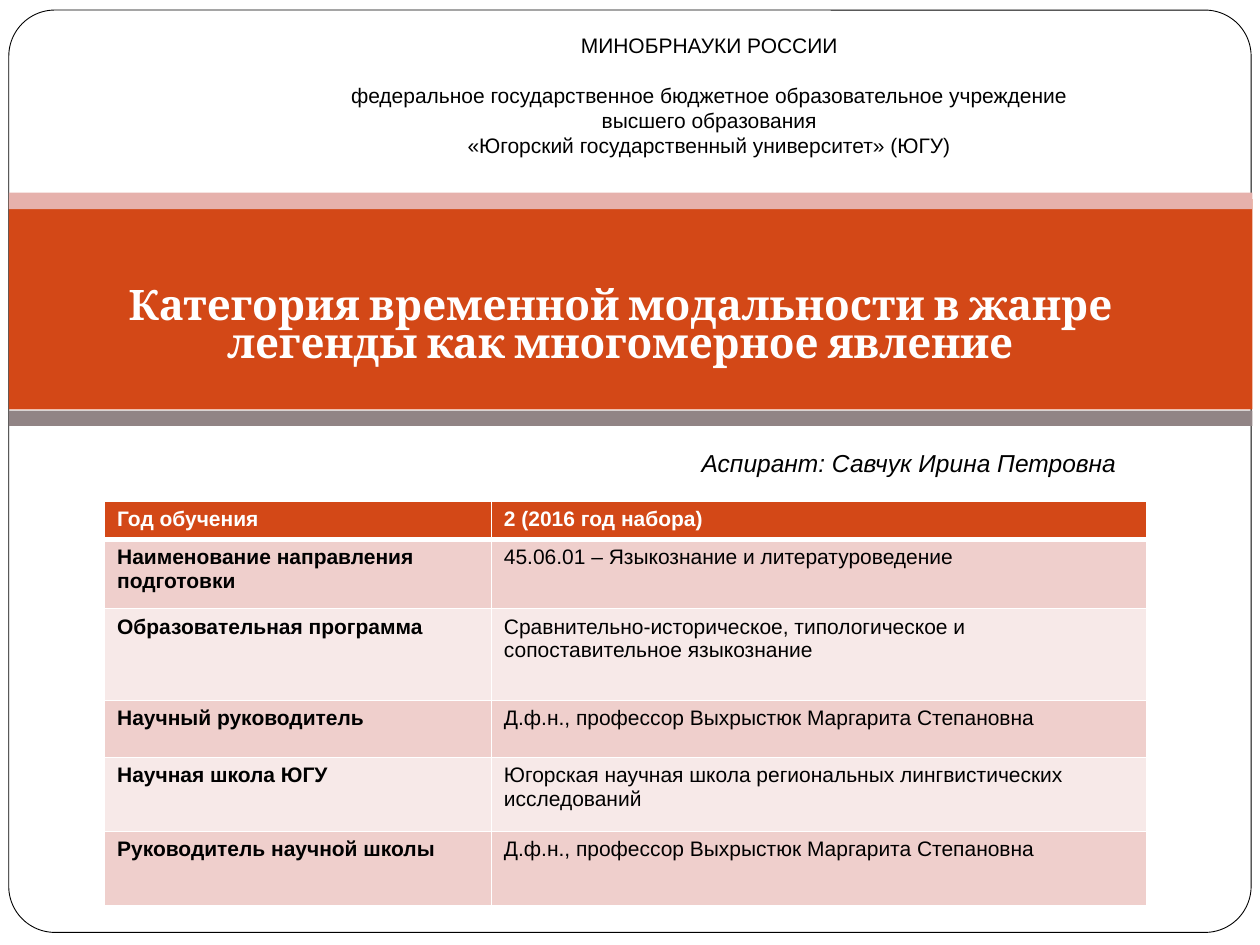
from lxml import etree
from pptx import Presentation
from pptx import util as u
from pptx.dml.color import RGBColor
from pptx.enum import shapes, text
from pptx.oxml import ns

COLORS = {
    "white": "FFFFFF",
    "black": "000000",
    "orange": "D34817",
    "pink": "E6B1AC",
    "gray": "918485",
    "dark_row": "EFCFCC",
    "light_row": "F7E9E8",
}

HEADER = [
    "МИНОБРНАУКИ РОССИИ",
    "федеральное государственное бюджетное образовательное учреждение",
    "высшего образования",
    "«Югорский государственный университет» (ЮГУ)",
]
TITLE = "Категория временной модальности в жанре легенды как многомерное явление"
AUTHOR = "Аспирант: Савчук Ирина Петровна"
DETAILS = [
    ("Год обучения", "2 (2016 год набора)"),
    ("Наименование направления подготовки", "45.06.01 – Языкознание и литературоведение"),
    ("Образовательная программа",
     "Сравнительно-историческое, типологическое и сопоставительное языкознание"),
    ("Научный руководитель", "Д.ф.н., профессор Выхрыстюк Маргарита Степановна"),
    ("Научная школа ЮГУ", "Югорская научная школа региональных лингвистических исследований"),
    ("Руководитель научной школы", "Д.ф.н., профессор Выхрыстюк Маргарита Степановна"),
]
COLUMN_WIDTHS = [3.07, 5.2]
ROW_HEIGHTS = [0.29, 0.55, 0.73, 0.45, 0.59, 0.59]


def color(name):
    return RGBColor.from_string(COLORS[name])


def inches(box):
    return [u.Inches(value) for value in box]


def set_font(paragraph, size, color_name="black", name="Arial", bold=False, italic=False):
    font = paragraph.font
    font.name = name
    font.size = u.Pt(size)
    font.bold = bold
    font.italic = italic
    font.color.rgb = color(color_name)


def add_panel(slide, kind, box, fill):
    shape = slide.shapes.add_shape(kind, *inches(box))
    shape.shadow.inherit = False
    shape.fill.solid()
    shape.fill.fore_color.rgb = color(fill)
    shape.line.fill.background()
    return shape


def add_text_frame(slide, box):
    frame = slide.shapes.add_textbox(*inches(box)).text_frame
    frame.word_wrap = True
    return frame


def add_frame(slide, box):
    frame = add_panel(slide, shapes.MSO_SHAPE.ROUNDED_RECTANGLE, box, "white")
    frame.adjustments[0] = 0.05
    frame.line.color.rgb = color("black")
    frame.line.width = u.Pt(0.5)


def add_title_band(slide, box):
    left, top, width, height = box
    rectangle = shapes.MSO_SHAPE.RECTANGLE
    add_panel(slide, rectangle, (left, top + 0.05, width, 1.67), "orange")
    add_panel(slide, rectangle, (left, top, width, 0.13), "pink")
    add_panel(slide, rectangle, (left, top + height - 0.12, width, 0.12), "gray")

    frame = add_text_frame(slide, (left + 0.29, top + 0.32, 9.13, 1.57))
    frame.vertical_anchor = text.MSO_ANCHOR.MIDDLE
    frame.margin_bottom = u.Inches(0.1)
    paragraph = frame.paragraphs[0]
    paragraph.text = TITLE
    paragraph.alignment = text.PP_ALIGN.CENTER
    paragraph.line_spacing = u.Pt(22)
    set_font(paragraph, 24, "white", "Cambria", bold=True)


def add_header(slide, box):
    frame = add_text_frame(slide, box)
    for index, line in enumerate(HEADER):
        paragraph = frame.paragraphs[0] if index == 0 else frame.add_paragraph()
        paragraph.text = line
        paragraph.alignment = text.PP_ALIGN.CENTER
        paragraph.line_spacing = u.Pt(14.3)
        set_font(paragraph, 12)
    frame.paragraphs[0].space_after = u.Pt(14.3)


def add_author(slide, box):
    paragraph = add_text_frame(slide, box).paragraphs[0]
    paragraph.text = AUTHOR
    set_font(paragraph, 14, italic=True)


def set_borders(cell, widths):
    properties = cell._tc.get_or_add_tcPr()
    for side, width in widths.items():
        line = etree.SubElement(properties, ns.qn(f"a:ln{side}"), w=str(u.Pt(width)))
        fill = etree.SubElement(line, ns.qn("a:solidFill"))
        etree.SubElement(fill, ns.qn("a:srgbClr"), val=COLORS["white"])


def add_details(slide, box):
    table = slide.shapes.add_table(len(DETAILS), len(COLUMN_WIDTHS), *inches(box)).table
    for column, width in zip(table.columns, COLUMN_WIDTHS):
        column.width = u.Inches(width)
    for row_index, values in enumerate(DETAILS):
        table.rows[row_index].height = u.Inches(ROW_HEIGHTS[row_index])
        is_heading = row_index == 0
        fill = "orange" if is_heading else ("light_row", "dark_row")[row_index % 2]
        for column_index, value in enumerate(values):
            cell = table.cell(row_index, column_index)
            set_borders(cell, {
                "L": 1,
                "R": 1,
                "T": 3 if row_index == 1 else 1,
                "B": 3 if is_heading else 1,
            })
            cell.fill.solid()
            cell.fill.fore_color.rgb = color(fill)
            cell.text = value
            set_font(cell.text_frame.paragraphs[0], 12,
                     "white" if is_heading else "black",
                     bold=is_heading or column_index == 0)


def main():
    presentation = Presentation()
    presentation.slide_width = u.Inches(10)
    presentation.slide_height = u.Inches(7.5)
    slide = presentation.slides.add_slide(presentation.slide_layouts[6])
    add_frame(slide, (0.07, 0.08, 9.86, 7.32))
    add_title_band(slide, (0.07, 1.53, 9.87, 1.85))
    add_author(slide, (5.47, 3.51, 4.32, 0.34))
    add_header(slide, (1.46, 0.21, 8.34, 1.11))
    add_details(slide, (0.83, 3.98, 8.27, 3.2))
    presentation.save("out.pptx")


if __name__ == "__main__":
    main()
